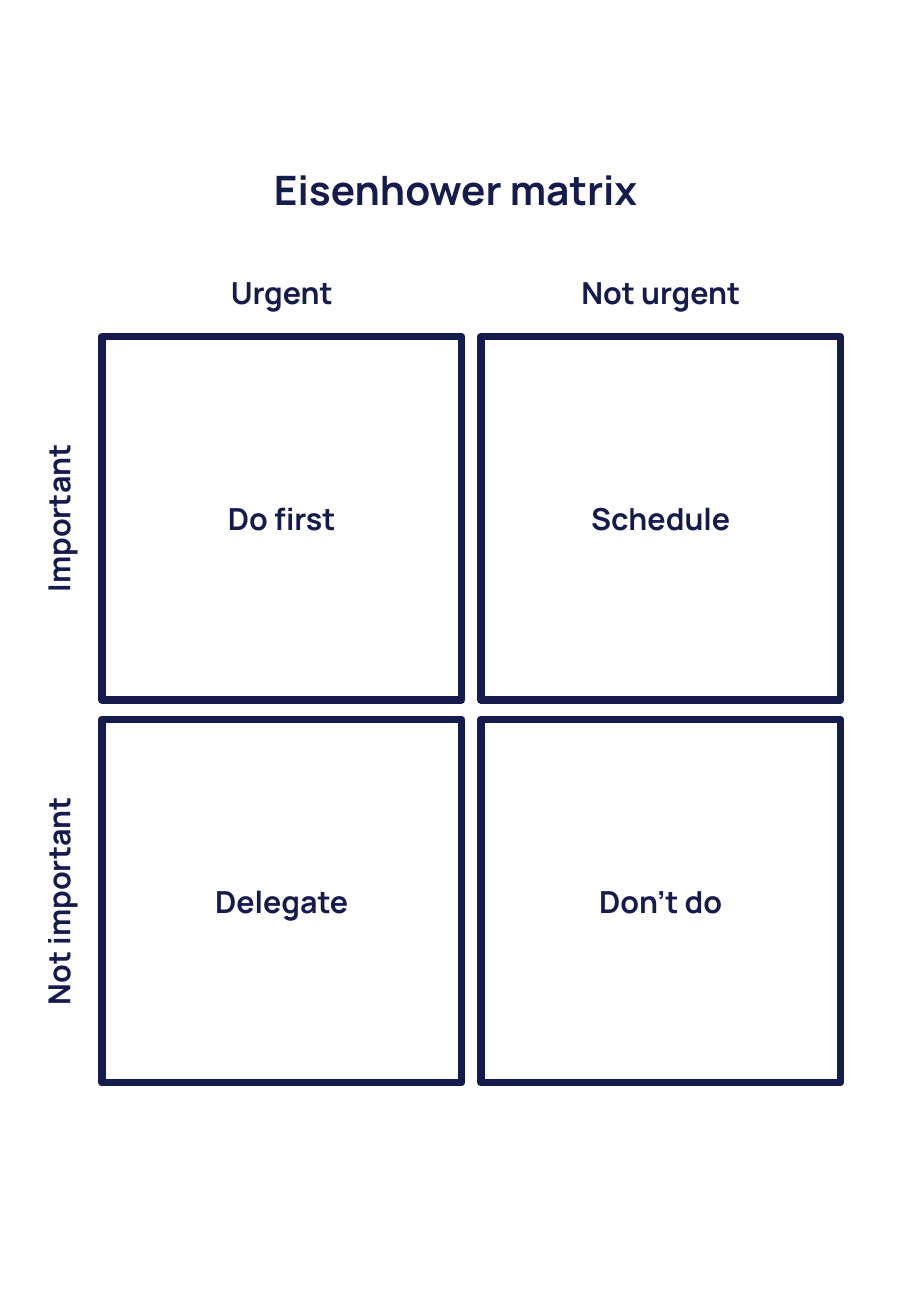
from dataclasses import dataclass

from pptx import Presentation, util as u
from pptx.dml.color import RGBColor
from pptx.enum import shapes, text


@dataclass(frozen=True)
class Theme:
    ink: str = "161B4E"
    paper: str = "FFFFFF"
    font: str = "Manrope"
    head: int = 24
    body: int = 18
    line: float = 4.5


@dataclass(frozen=True)
class Grid:
    left: float = 0.84
    top: float = 2.77
    wide: float = 2.96
    high: float = 2.99
    gap: float = 0.16

    def cell(self, col, row):
        return (self.left + col * (self.wide + self.gap),
                self.top + row * (self.high + self.gap),
                self.wide, self.high)

    def mid(self, col, row):
        x, y, w, h = self.cell(col, row)
        return x + w / 2, y + h / 2


class Board:
    def __init__(self, slide, theme, grid):
        self.slide, self.theme, self.grid = slide, theme, grid
        fill = slide.background.fill
        fill.solid()
        fill.fore_color.rgb = RGBColor.from_string(theme.paper)

    def letter(self, shape, words, size):
        frame = shape.text_frame
        frame.word_wrap = True
        frame.vertical_anchor = text.MSO_ANCHOR.MIDDLE
        para = frame.paragraphs[0]
        para.alignment = text.PP_ALIGN.CENTER
        run = para.add_run()
        run.text = words
        font = run.font
        font.name, font.size, font.bold = self.theme.font, u.Pt(size), True
        font.color.rgb = RGBColor.from_string(self.theme.ink)

    def title(self, words, top, high, wide):
        box = self.slide.shapes.title
        box.left, box.top = u.Inches(0), u.Inches(top)
        box.width, box.height = u.Inches(wide), u.Inches(high)
        self.letter(box, words, self.theme.head)

    def label(self, words, x, y, wide=2.51, high=0.4, turn=0):
        """Place a label by its centre, turned about it."""
        box = self.slide.shapes.add_textbox(
            u.Inches(x - wide / 2), u.Inches(y - high / 2),
            u.Inches(wide), u.Inches(high))
        box.rotation = turn
        self.letter(box, words, self.theme.body)

    def square(self, words, col, row):
        box = self.slide.shapes.add_shape(
            shapes.MSO_SHAPE.RECTANGLE,
            *map(u.Inches, self.grid.cell(col, row)))
        box.shadow.inherit = False
        box.fill.background()
        box.line.width = u.Pt(self.theme.line)
        box.line.color.rgb = RGBColor.from_string(self.theme.ink)
        self.letter(box, words, self.theme.body)


def main():
    deck = Presentation()
    deck.slide_width, deck.slide_height = u.Inches(7.5), u.Inches(10.83)
    grid = Grid()
    board = Board(deck.slides.add_slide(deck.slide_layouts[5]), Theme(), grid)

    # Title
    board.title("Eisenhower matrix", 1.31, 0.5, 7.5)

    # Column and row labels
    for col, words in enumerate(["Urgent", "Not urgent"]):
        board.label(words, grid.mid(col, 0)[0], 2.41)
    for row, words in enumerate(["Important", "Not important"]):
        board.label(words, 0.48, grid.mid(0, row)[1], turn=270)

    # Four quadrants
    tasks = [["Do first", "Schedule"], ["Delegate", "Don’t do"]]
    for row, line in enumerate(tasks):
        for col, words in enumerate(line):
            board.square(words, col, row)

    deck.save("out.pptx")


if __name__ == "__main__":
    main()
